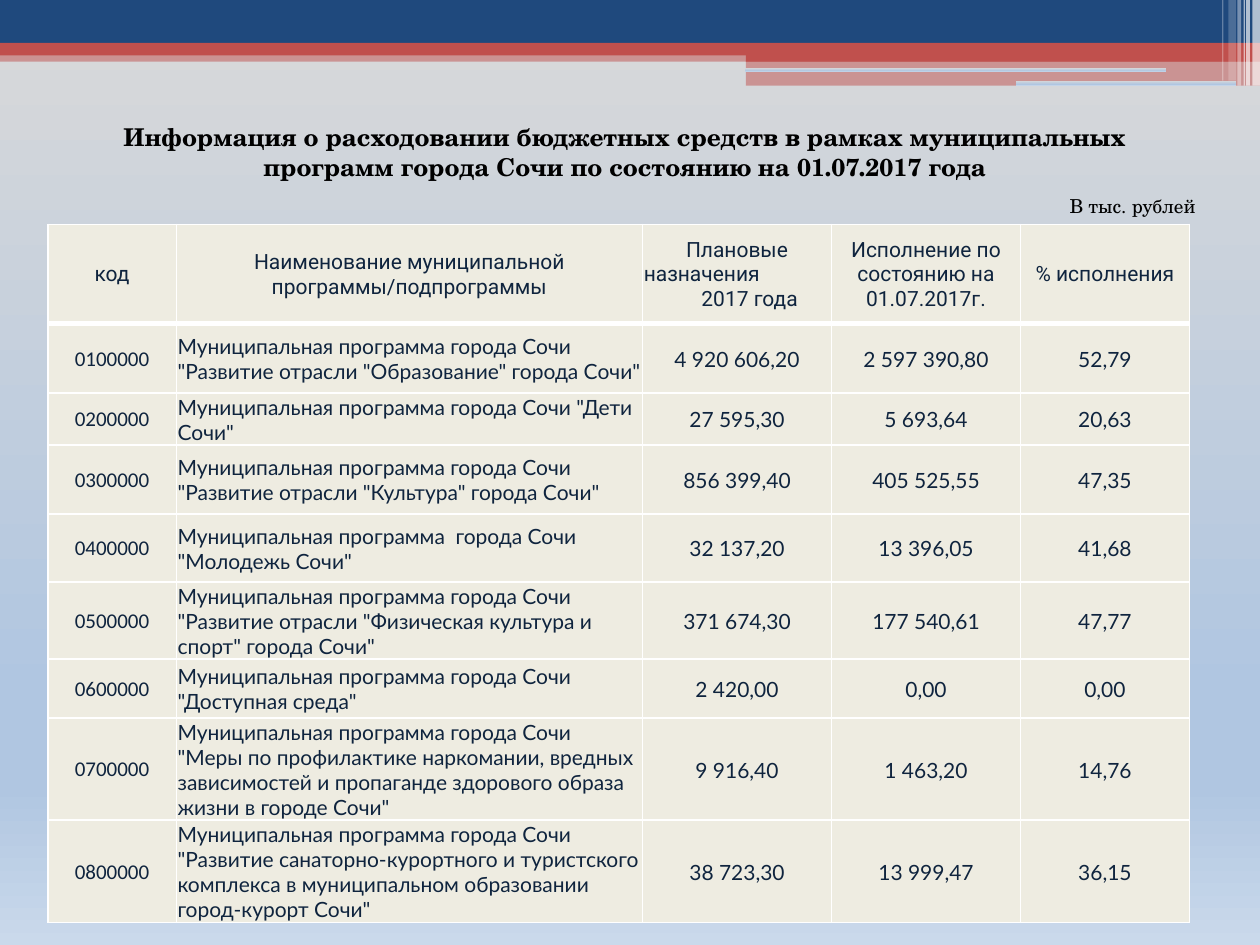
from dataclasses import dataclass

from pptx import Presentation
from pptx.dml.color import RGBColor
from pptx.enum.shapes import MSO_SHAPE
from pptx.enum.text import MSO_ANCHOR, PP_ALIGN
from pptx.oxml.ns import qn
from pptx.util import Inches, Pt
from lxml import etree

RECTANGLE = MSO_SHAPE.RECTANGLE
ROUNDED = MSO_SHAPE.ROUNDED_RECTANGLE
LEFT, CENTER = PP_ALIGN.LEFT, PP_ALIGN.CENTER
TOP, MIDDLE = MSO_ANCHOR.TOP, MSO_ANCHOR.MIDDLE


@dataclass(frozen=True)
class Theme:
    navy: str = "1F497D"
    red: str = "C0504D"
    white: str = "FFFFFF"
    black: str = "000000"
    cell: str = "EEECE1"
    ink: str = "0F243E"
    gradient: tuple = ((0, "D9D9D9"), (74, "B0C6E1"), (83, "B0C6E1"), (100, "CAD9EB"))
    title_size: int = 14
    unit_size: int = 11
    table_size: int = 12
    heading_font: str = "TeX Gyre Schola"
    header_font: str = "Roboto"
    code_font: str = "Calibri"
    body_font: str = "Lato"
    thin: int = 1
    thick: int = 3


BANDS = [
    (0, 0.4, 10, 0.09, "red", 50),
    (0, 0, 10, 0.34, "navy", 100),
    (0, 0.34, 10, 0.1, "red", 100),
    (5.92, 0.39, 4.08, 0.1, "red", 100),
    (5.92, 0.48, 4.08, 0.2, "red", 50),
]
SLITS = [(5.91, 0.54, 3.35, 0.03), (8.06, 0.64, 1.75, 0.04)]
STRIPES = [
    (9.94, 0.06, 0.68, 65),
    (9.89, 0.03, 0.68, 65),
    (9.87, 0.01, 0.68, 60),
    (9.82, 0.03, 0.68, 40),
    (9.75, 0.06, 0.64, 20),
    (9.7, 0.01, 0.64, 30),
]

COLUMN_WIDTHS = [1.02, 3.7, 1.5, 1.5, 1.34]
ROW_HEIGHTS = [0.79, 0.55, 0.41, 0.55, 0.54, 0.56, 0.47, 0.65, 0.79]
HEADERS = [
    "код",
    "Наименование муниципальной программы/подпрограммы",
    "Плановые\nназначения\n2017 года",
    "Исполнение по состоянию на 01.07.2017г.",
    "% исполнения",
]
PROGRAM_PREFIX = "Муниципальная программа города Сочи "
PROGRAMS = [
    ("0100000", PROGRAM_PREFIX + '"Развитие отрасли "Образование" города Сочи"',
     "4 920 606,20", "2 597 390,80", "52,79"),
    ("0200000", PROGRAM_PREFIX + '"Дети Сочи"', "27 595,30", "5 693,64", "20,63"),
    ("0300000", PROGRAM_PREFIX + '"Развитие отрасли "Культура" города Сочи"',
     "856 399,40", "405 525,55", "47,35"),
    ("0400000", 'Муниципальная программа  города Сочи "Молодежь Сочи"',
     "32 137,20", "13 396,05", "41,68"),
    ("0500000", PROGRAM_PREFIX
     + '"Развитие отрасли "Физическая культура и спорт" города Сочи"',
     "371 674,30", "177 540,61", "47,77"),
    ("0600000", PROGRAM_PREFIX + '"Доступная среда"', "2 420,00", "0,00", "0,00"),
    ("0700000", PROGRAM_PREFIX + '"Меры по профилактике наркомании, вредных '
     'зависимостей и пропаганде здорового образа жизни в городе Сочи"',
     "9 916,40", "1 463,20", "14,76"),
    ("0800000", PROGRAM_PREFIX + '"Развитие санаторно-курортного и туристского '
     'комплекса в муниципальном образовании город-курорт Сочи"',
     "38 723,30", "13 999,47", "36,15"),
]


def write_text(frame, text, *, font, size, color, bold=False, align=LEFT):
    frame.text = text
    for paragraph in frame.paragraphs:
        paragraph.alignment = align
        for run in paragraph.runs:
            run.font.name = font
            run.font.size = Pt(size)
            run.font.bold = bold
            run.font.color.rgb = RGBColor.from_string(color)


class SlideBuilder:
    def __init__(self, slide, theme):
        self.slide = slide
        self.theme = theme

    def gradient(self, fill, element):
        fill.gradient()
        fill.gradient_angle = 270
        stops = element.find(".//" + qn("a:gsLst"))
        for stop in list(stops):
            stops.remove(stop)
        for position, color in self.theme.gradient:
            stop = etree.SubElement(stops, qn("a:gs"), pos=str(position * 1000))
            etree.SubElement(stop, qn("a:srgbClr"), val=color)

    def background(self):
        self.gradient(self.slide.background.fill, self.slide.element)

    def shape(self, kind, left, top, width, height):
        shape = self.slide.shapes.add_shape(
            kind, Inches(left), Inches(top), Inches(width), Inches(height))
        shape.shadow.inherit = False
        shape.line.fill.background()
        return shape

    def band(self, left, top, width, height, color, opacity):
        shape = self.shape(RECTANGLE, left, top, width, height)
        shape.fill.solid()
        shape.fill.fore_color.rgb = RGBColor.from_string(color)
        if opacity < 100:
            color_element = shape.element.spPr.find(
                qn("a:solidFill") + "/" + qn("a:srgbClr"))
            etree.SubElement(color_element, qn("a:alpha"), val=str(opacity * 1000))

    def slit(self, left, top, width, height):
        shape = self.shape(ROUNDED, left, top, width, height)
        self.gradient(shape.fill, shape.element)

    def text(self, left, top, width, height, text, **style):
        box = self.slide.shapes.add_textbox(
            Inches(left), Inches(top), Inches(width), Inches(height))
        box.text_frame.word_wrap = True
        write_text(box.text_frame, text, font=self.theme.heading_font,
                   color=self.theme.black, **style)

    def borders(self, cell, top, bottom):
        properties = cell._tc.get_or_add_tcPr()
        thin = self.theme.thin
        sides = (("a:lnL", thin), ("a:lnR", thin), ("a:lnT", top), ("a:lnB", bottom))
        for index, (side, width) in enumerate(sides):
            line = etree.Element(qn(side), w=str(Pt(width)))
            solid = etree.SubElement(line, qn("a:solidFill"))
            etree.SubElement(solid, qn("a:srgbClr"), val=self.theme.white)
            properties.insert(index, line)

    def cell(self, cell, text, row, column):
        theme = self.theme
        cell.margin_left = cell.margin_right = cell.margin_top = Inches(0.01)
        cell.margin_bottom = 0
        cell.vertical_anchor = TOP if (row, column) == (2, 1) else MIDDLE
        cell.fill.solid()
        cell.fill.fore_color.rgb = RGBColor.from_string(theme.cell)
        self.borders(cell, theme.thick if row == 1 else theme.thin,
                     theme.thick if row == 0 else theme.thin)
        body_font = theme.code_font if column == 0 else theme.body_font
        write_text(cell.text_frame, text,
                   font=theme.header_font if row == 0 else body_font,
                   size=theme.table_size, color=theme.ink,
                   align=LEFT if row and column == 1 else CENTER)

    def table(self, left, top, rows, widths, heights):
        table = self.slide.shapes.add_table(
            len(rows), len(widths), Inches(left), Inches(top),
            Inches(sum(widths)), Inches(sum(heights))).table
        table.first_row = table.horz_banding = False
        for column, width in zip(table.columns, widths):
            column.width = Inches(width)
        for row, height in zip(table.rows, heights):
            row.height = Inches(height)
        for row_index, values in enumerate(rows):
            for column_index, value in enumerate(values):
                self.cell(table.cell(row_index, column_index), value,
                          row_index, column_index)
        return table


def main():
    theme = Theme()
    presentation = Presentation()
    presentation.slide_width, presentation.slide_height = Inches(10), Inches(7.5)
    slide = presentation.slides.add_slide(presentation.slide_layouts[6])
    builder = SlideBuilder(slide, theme)
    builder.background()
    for left, top, width, height, color, opacity in BANDS:
        builder.band(left, top, width, height, getattr(theme, color), opacity)
    for slit in SLITS:
        builder.slit(*slit)
    for left, width, height, opacity in STRIPES:
        builder.band(left, 0, width, height, theme.white, opacity)
    table = builder.table(0.38, 1.78, [HEADERS, *PROGRAMS], COLUMN_WIDTHS, ROW_HEIGHTS)
    plan_lines = table.cell(0, 2).text_frame.paragraphs
    plan_lines[1].alignment = LEFT
    plan_lines[2]._p.get_or_add_pPr().set("marL", str(Inches(0.2)))
    builder.text(0.51, 0.92, 8.9, 0.57,
                 "Информация о расходовании бюджетных средств в рамках муниципальных "
                 "программ города Сочи по состоянию на 01.07.2017 года",
                 size=theme.title_size, bold=True, align=CENTER)
    builder.text(8.39, 1.49, 1.57, 0.29, "В тыс. рублей", size=theme.unit_size)
    presentation.save("out.pptx")


if __name__ == "__main__":
    main()
